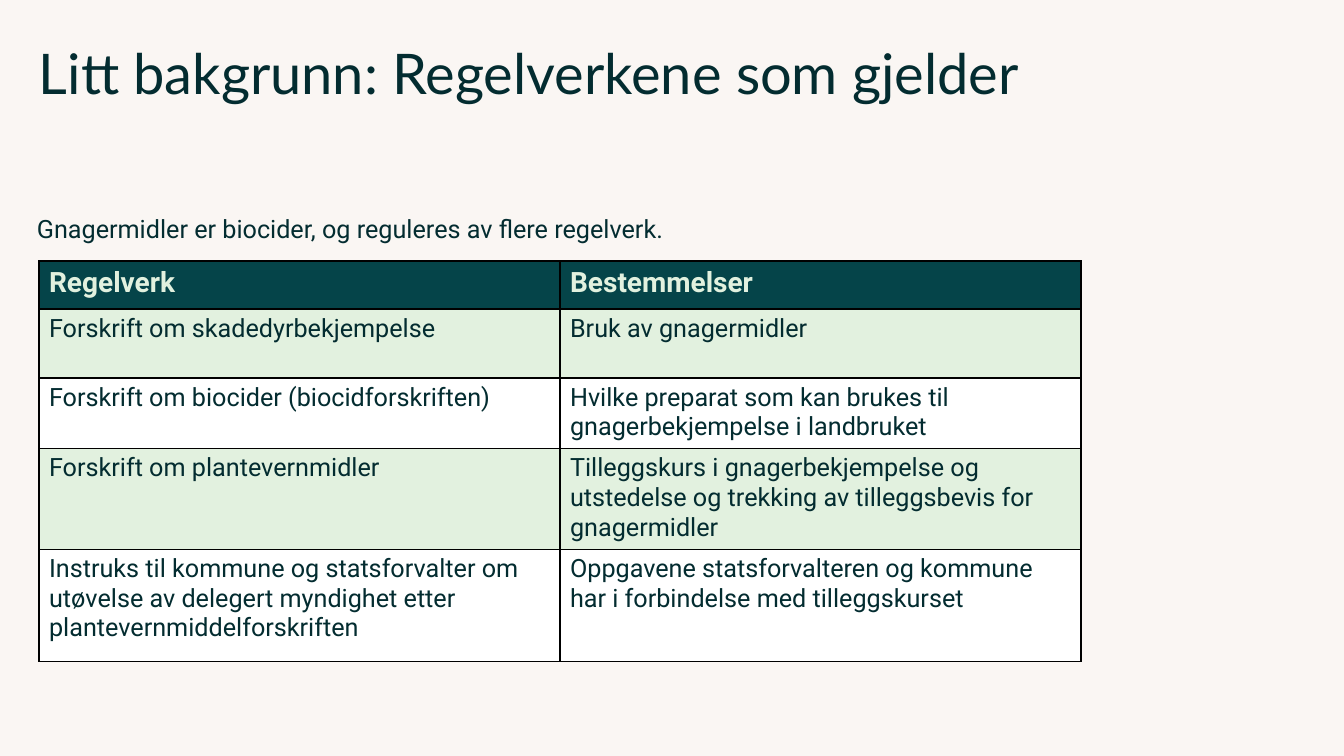
from lxml import etree
from pptx import Presentation
from pptx import util as u
from pptx.dml.color import RGBColor
from pptx.oxml import ns

TITLE = "Litt bakgrunn: Regelverkene som gjelder"
INTRO = "Gnagermidler er biocider, og reguleres av flere regelverk."
REGULATIONS = [
    ("Regelverk", "Bestemmelser"),
    ("Forskrift om skadedyrbekjempelse", "Bruk av gnagermidler"),
    ("Forskrift om biocider (biocidforskriften)",
     "Hvilke preparat som kan brukes til gnagerbekjempelse i landbruket"),
    ("Forskrift om plantevernmidler",
     "Tilleggskurs i gnagerbekjempelse og utstedelse og trekking av "
     "tilleggsbevis for gnagermidler"),
    ("Instruks til kommune og statsforvalter om utøvelse av delegert "
     "myndighet etter plantevernmiddelforskriften",
     "Oppgavene statsforvalteren og kommune har i forbindelse med "
     "tilleggskurset"),
]

PAGE_SIZE = (1344, 756)
TITLE_AREA = (39, 39, 1262, 137)
INTRO_AREA = (27, 208, 940, 40)
TABLE_CORNER = (39, 261)
COLUMN_WIDTH = 521
ROW_HEIGHTS = [48, 69, 69, 99, 112]

CREAM, DARK, TEAL, MINT, WHITE, BLACK = (
    "FAF6F3", "032C30", "054449", "E2F1DF", "FFFFFF", "000000")
TITLE_FONT = {"name": "Lato", "size": u.Pt(40), "bold": False}
BODY_FONT = {"name": "Roboto", "size": u.Pt(18), "bold": False}
HEADER_FONT = {"name": "Roboto", "size": u.Pt(20), "bold": True}
NO_MARGINS = {"margin_left": 0, "margin_top": 0,
              "margin_right": 0, "margin_bottom": 0}


def px(length):
    return round(length * u.Inches(1) / 100.8)


def paint(fill, color):
    fill.solid()
    fill.fore_color.rgb = RGBColor.from_string(color)


def write(frame, content, font, color):
    frame.word_wrap = True
    frame.text = content
    span = frame.paragraphs[0].runs[0]
    for name, value in font.items():
        setattr(span.font, name, value)
    span.font.color.rgb = RGBColor.from_string(color)


def add_text(page, area, content, font, layout):
    box = page.shapes.add_textbox(*map(px, area))
    for name, value in layout.items():
        setattr(box.text_frame, name, value)
    write(box.text_frame, content, font, DARK)


def add_borders(cell):
    """Put a thin line on all four sides, ahead of the cell's fill."""
    properties = cell._tc.get_or_add_tcPr()
    for index, side in enumerate(("lnL", "lnR", "lnT", "lnB")):
        line = etree.Element(ns.qn(f"a:{side}"), w=str(u.Pt(1)))
        fill = etree.SubElement(line, ns.qn("a:solidFill"))
        etree.SubElement(fill, ns.qn("a:srgbClr"), val=BLACK)
        properties.insert(index, line)


def add_regulations(page):
    columns = len(REGULATIONS[0])
    size = (COLUMN_WIDTH * columns, sum(ROW_HEIGHTS))
    table = page.shapes.add_table(
        len(REGULATIONS), columns, *map(px, TABLE_CORNER + size)).table
    for column in table.columns:
        column.width = px(COLUMN_WIDTH)
    for index, (contents, height) in enumerate(zip(REGULATIONS, ROW_HEIGHTS)):
        table.rows[index].height = px(height)
        if index == 0:
            background, font, color = TEAL, HEADER_FONT, MINT
        else:
            background, font, color = (WHITE, MINT)[index % 2], BODY_FONT, DARK
        for cell, content in zip(table.rows[index].cells, contents):
            paint(cell.fill, background)
            add_borders(cell)
            write(cell.text_frame, content, font, color)


def main():
    deck = Presentation()
    deck.slide_width, deck.slide_height = map(px, PAGE_SIZE)
    page = deck.slides.add_slide(deck.slide_layouts[6])
    paint(page.background.fill, CREAM)
    add_text(page, TITLE_AREA, TITLE, TITLE_FONT, NO_MARGINS)
    add_regulations(page)
    add_text(page, INTRO_AREA, INTRO, BODY_FONT, {})
    deck.save("out.pptx")


if __name__ == "__main__":
    main()
